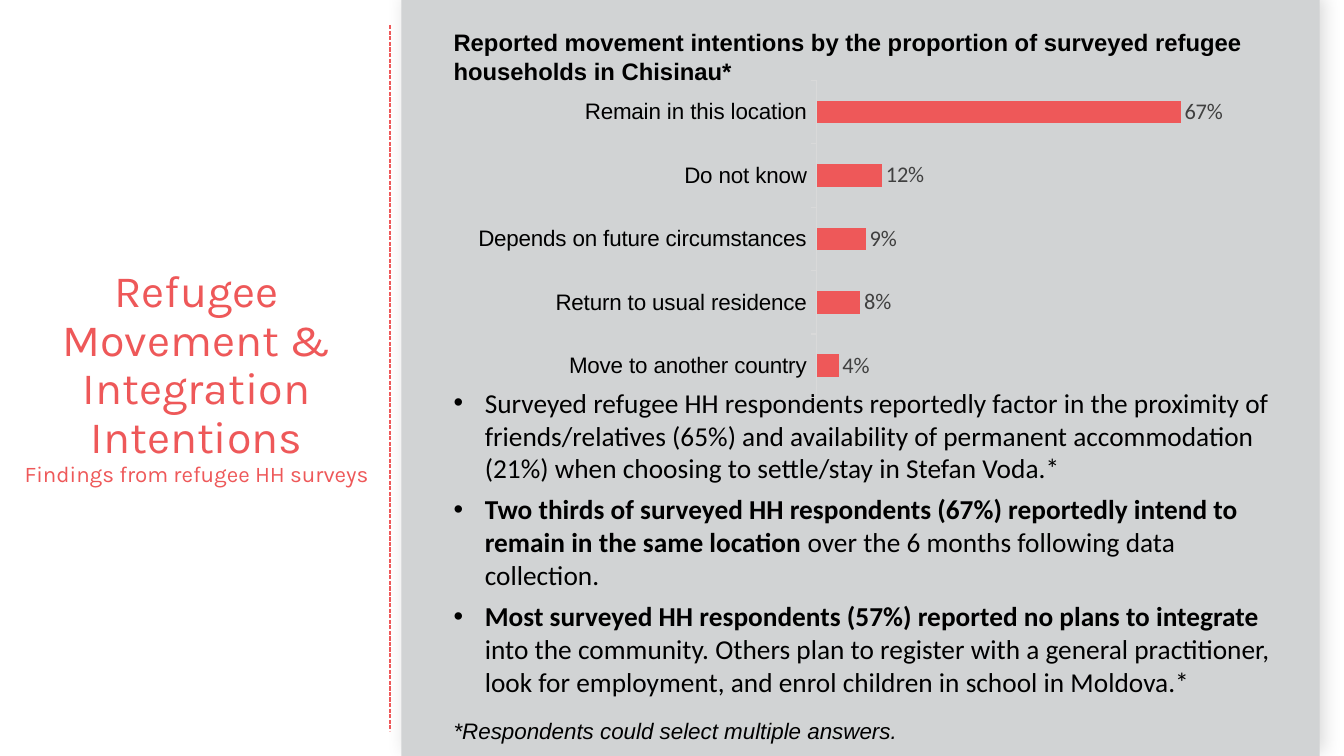
from lxml import etree
from pptx import Presentation
from pptx.chart.data import CategoryChartData
from pptx.dml.color import RGBColor
from pptx.enum import chart as ch, shapes, text
from pptx.enum.dml import MSO_LINE
from pptx.oxml import parse_xml
from pptx.oxml.ns import nsdecls, qn
from pptx.util import Inches, Pt

CORAL = RGBColor(0xEE, 0x58, 0x59)
PANEL_GREY = RGBColor(0xD1, 0xD3, 0xD4)
AXIS_GREY = RGBColor(0xD9, 0xD9, 0xD9)
LABEL_GREY = RGBColor(0x40, 0x40, 0x40)
BLACK = RGBColor(0, 0, 0)

INTENTIONS = [
    ("Move to another country", 0.04),
    ("Return to usual residence", 0.08),
    ("Depends on future circumstances", 0.09),
    ("Do not know", 0.12),
    ("Remain in this location", 0.67),
]

# Each finding is a list of (text, bold) runs.
FINDINGS = [
    [("Surveyed refugee HH respondents reportedly factor in the proximity of "
      "friends/relatives (65%) and availability of permanent accommodation (21%) "
      "when choosing to settle/stay in Stefan Voda.*", False)],
    [("Two thirds of surveyed HH respondents (67%) reportedly intend to remain "
      "in the same location ", True),
     ("over the 6 months following data collection.", False)],
    [("Most surveyed HH respondents (57%) reported no plans to integrate", True),
     (" into the community. Others plan to register with a general practitioner, "
      "look for employment, and enrol children in school in Moldova.*", False)],
]


def style_font(font, name, size, color, bold=False, italic=False):
    font.name, font.size = name, Pt(size)
    font.bold, font.italic = bold, italic
    font.color.rgb = color


def add_run(p, words, *style, **flags):
    r = p.add_run()
    r.text = words
    style_font(r.font, *style, **flags)


def add_text_box(slide, left, top, width, height):
    box = slide.shapes.add_textbox(
        Inches(left), Inches(top), Inches(width), Inches(height))
    box.text_frame.word_wrap = True
    return box.text_frame


def add_panel(slide):
    sp = slide.shapes.add_shape(
        shapes.MSO_SHAPE.RECTANGLE, Inches(3.98), 0, Inches(9.11), Inches(7.5))
    sp.fill.solid()
    sp.fill.fore_color.rgb = PANEL_GREY
    sp.line.fill.background()
    sp.shadow.inherit = False
    effects = sp._element.spPr.find(qn("a:effectLst"))
    effects.append(parse_xml(
        f'<a:outerShdw {nsdecls("a")} blurRad="{Pt(13)}" dist="{Pt(4)}" '
        f'dir="{328 * 60000}" algn="ctr" rotWithShape="0">'
        '<a:srgbClr val="000000"><a:alpha val="15000"/></a:srgbClr>'
        '</a:outerShdw>'))


def add_divider(slide):
    x = Inches(3.87)
    line = slide.shapes.add_connector(
        shapes.MSO_CONNECTOR.STRAIGHT, x, Inches(0.25), x, Inches(7.25))
    line.line.color.rgb = CORAL
    line.line.width = Pt(1)
    line.line.dash_style = MSO_LINE.SQUARE_DOT
    etree.SubElement(line._element.spPr, qn("a:effectLst"))


def fill_title(title):
    title.left, title.top = Inches(0.14), Inches(2.22)
    title.width, title.height = Inches(3.62), Inches(3.06)
    tf = title.text_frame
    tf.word_wrap = True
    tf.vertical_anchor = text.MSO_ANCHOR.MIDDLE
    tf.auto_size = text.MSO_AUTO_SIZE.NONE
    p = tf.paragraphs[0]
    p.alignment = text.PP_ALIGN.CENTER
    p.line_spacing = 0.9
    add_run(p, "Refugee Movement & Integration Intentions", "Karla", 32, CORAL)
    p.add_line_break()
    add_run(p, "Findings from refugee HH surveys", "Karla", 16, CORAL)


def add_bullet(p):
    p.space_before = Pt(6)
    pPr = p._p.get_or_add_pPr()
    pPr.set("marL", str(Inches(0.31)))
    pPr.set("indent", str(-Inches(0.31)))
    etree.SubElement(pPr, qn("a:buFont")).set("typeface", "Arial")
    etree.SubElement(pPr, qn("a:buChar")).set("char", "•")


def add_findings(slide):
    tf = add_text_box(slide, 4.4, 3.78, 8.39, 3.3)
    for i, runs in enumerate(FINDINGS):
        p = tf.add_paragraph() if i else tf.paragraphs[0]
        add_bullet(p)
        for words, bold in runs:
            add_run(p, words, "Calibri", 19.5, BLACK, bold=bold)


def set_plot_area(chart, x, y, w, h):
    """Fix the inner plot area, in fractions of the chart."""
    plot_area = chart._chartSpace.chart.plotArea
    for old in plot_area.findall(qn("c:layout")):
        plot_area.remove(old)
    plot_area.insert(0, parse_xml(
        f'<c:layout {nsdecls("c")}><c:manualLayout>'
        '<c:layoutTarget val="inner"/><c:xMode val="edge"/><c:yMode val="edge"/>'
        f'<c:x val="{x}"/><c:y val="{y}"/><c:w val="{w}"/><c:h val="{h}"/>'
        '</c:manualLayout></c:layout>'))


def add_intentions_chart(slide):
    data = CategoryChartData(number_format="0%")
    data.categories = [name for name, _ in INTENTIONS]
    data.add_series("Series 1", [share for _, share in INTENTIONS])
    chart = slide.shapes.add_chart(
        ch.XL_CHART_TYPE.BAR_CLUSTERED, Inches(4.59), Inches(0.73),
        Inches(7.98), Inches(3.28), data).chart
    chart.has_legend = chart.has_title = False
    style_font(chart.font, "Calibri", 20, BLACK)
    set_plot_area(chart, 0.44, 0.02, 0.54, 0.96)

    axis = chart.category_axis
    axis.major_tick_mark = ch.XL_TICK_MARK.OUTSIDE
    axis.format.line.color.rgb = AXIS_GREY
    axis.format.line.width = Pt(0.75)
    style_font(axis.tick_labels.font, "Arial", 16, BLACK)
    values = chart.value_axis
    values.visible = values.has_major_gridlines = False
    values.minimum_scale, values.maximum_scale = 0, 0.8

    plot = chart.plots[0]
    plot.gap_width = 182
    plot.vary_by_categories = False
    bars = plot.series[0]
    bars.format.fill.solid()
    bars.format.fill.fore_color.rgb = CORAL
    labels = bars.data_labels
    labels.show_value = True
    labels.position = ch.XL_LABEL_POSITION.OUTSIDE_END
    labels.number_format, labels.number_format_is_linked = "0%", False
    style_font(labels.font, "Calibri", 16, LABEL_GREY)


def add_footnote(slide):
    p = add_text_box(slide, 4.4, 7.1, 7.05, 0.4).paragraphs[0]
    p.line_spacing = 0.9
    add_run(p, "*Respondents could select multiple answers.",
            "Arial", 16, BLACK, italic=True)


def add_chart_heading(slide):
    p = add_text_box(slide, 4.4, 0.23, 8.06, 0.67).paragraphs[0]
    add_run(p, "Reported movement intentions by the proportion of surveyed "
            "refugee households in Chisinau*", "Arial", 17, BLACK, bold=True)


def main():
    prs = Presentation()
    prs.slide_width, prs.slide_height = Inches(13.33), Inches(7.5)
    slide = prs.slides.add_slide(prs.slide_layouts[5])
    add_panel(slide)
    add_divider(slide)
    fill_title(slide.shapes.title)
    add_findings(slide)
    add_intentions_chart(slide)
    add_footnote(slide)
    add_chart_heading(slide)
    prs.save("out.pptx")


if __name__ == "__main__":
    main()
